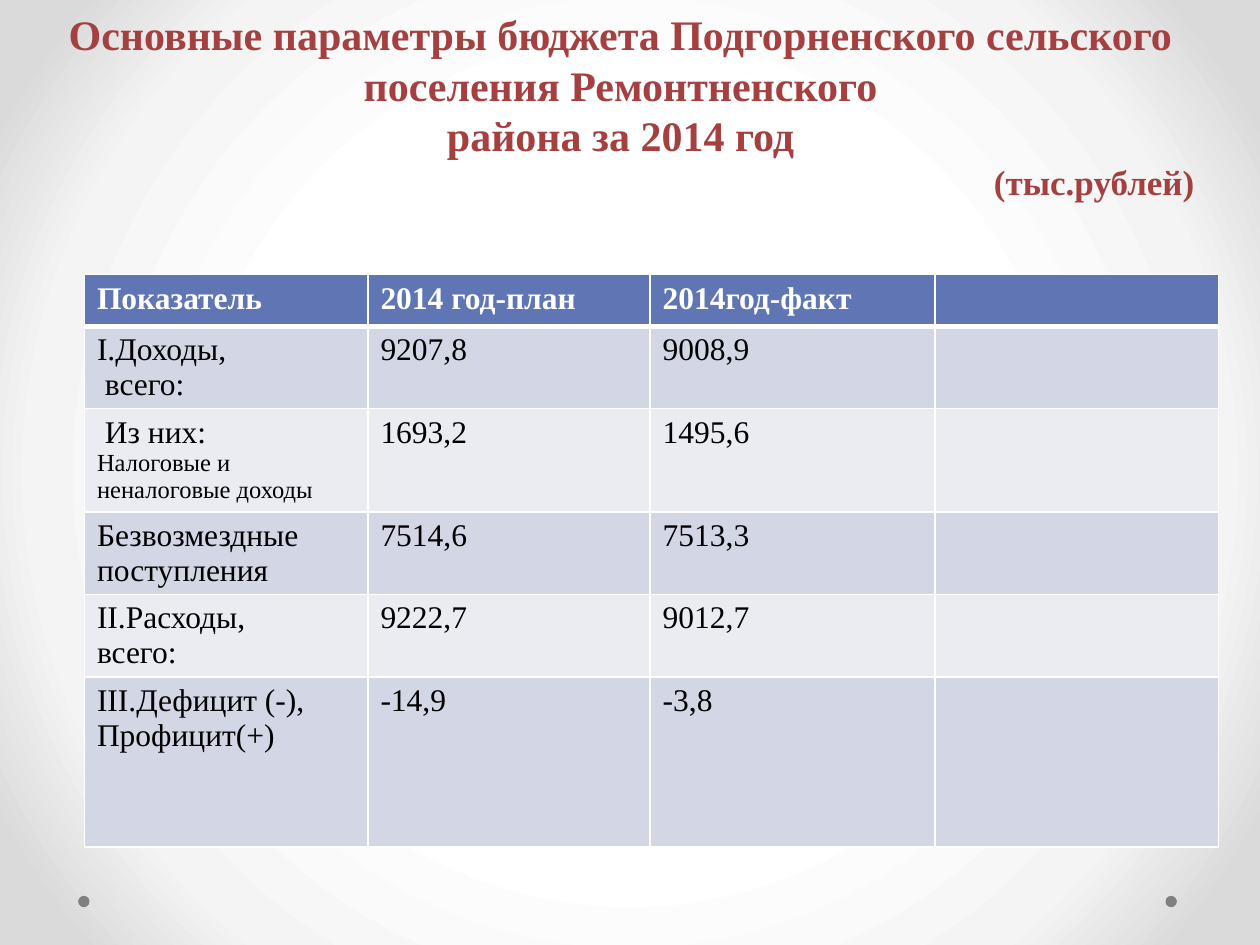
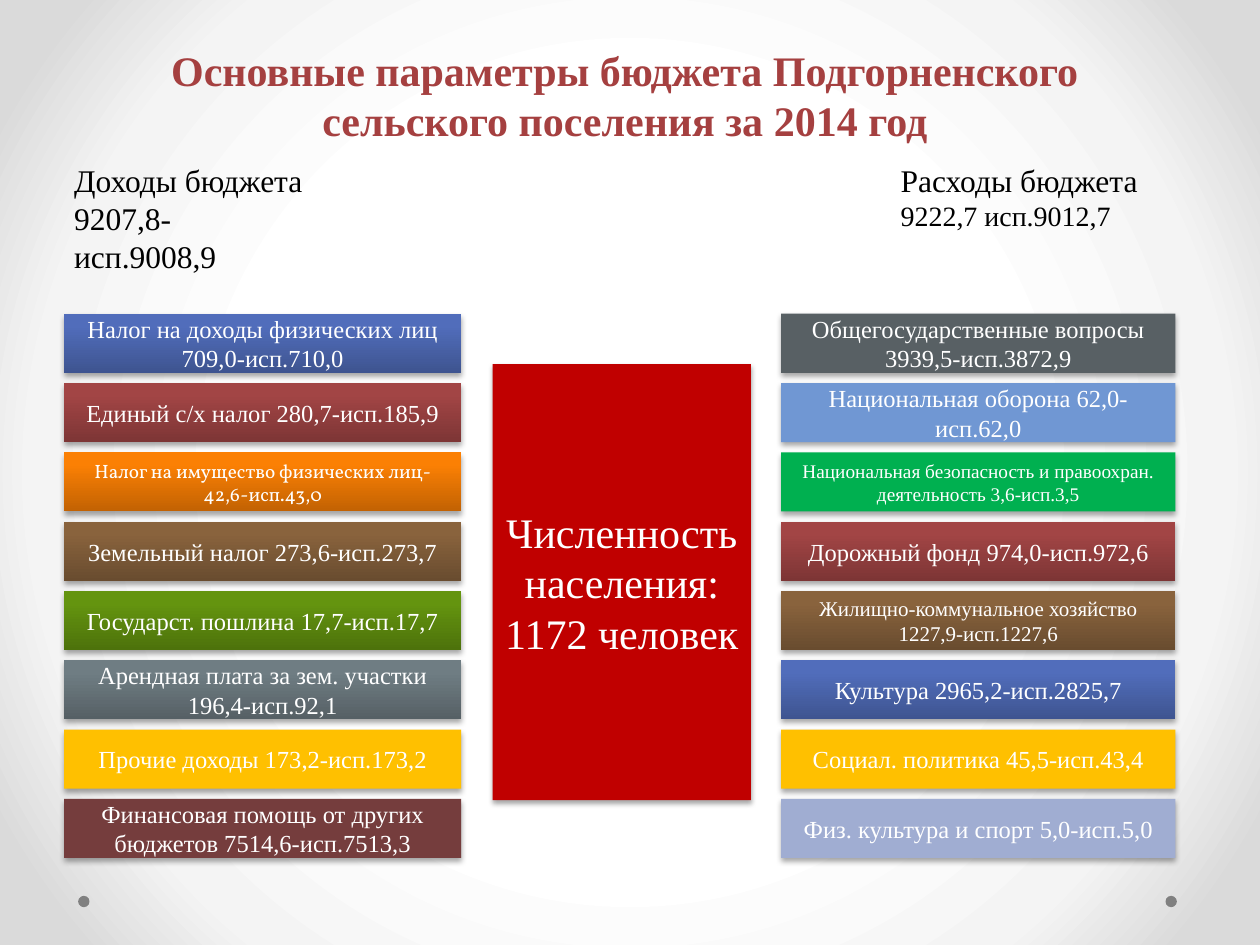
"""Builds two slides on the 2014 budget of a rural settlement."""
from lxml import etree
from pptx import Presentation
from pptx.dml.color import RGBColor
from pptx.enum.shapes import MSO_SHAPE as SHAPE
from pptx.enum.text import MSO_ANCHOR as ANCHOR, MSO_AUTO_SIZE as AUTOSIZE, PP_ALIGN as ALIGN
from pptx.oxml import parse_xml
from pptx.oxml.ns import nsdecls, qn
from pptx.util import Inches, Pt

COLORS = {
    "white": "FFFFFF", "black": "000000", "title": "A54040", "dot": "808080",
    "header": "6076B4", "band_dark": "D2D6E5", "band_light": "EAECF2",
    "slate": "586064", "sky": "7097D3", "emerald": "00B050", "gold": "FFC000",
    "lavender": "A0ADD2", "maroon": "753D3D", "scarlet": "C00000",
    "blue": "516DBB", "blue_dark": "3E5490", "red": "A24545", "red_dark": "7D3535",
    "orange": "FB8004", "orange_dark": "C26203", "brown": "89633D", "brown_dark": "694C2F",
    "green": "64940F", "green_dark": "4D720B", "gray": "6F7D83", "gray_dark": "566065",
}
BACKGROUND_STOPS = [(50, "FFFFFF"), (76, "F4F4F4"), (92, "DADADA")]
FONT = "Times New Roman"

BUDGET = [
    ["Показатель", "2014 год-план", "2014год-факт", ""],
    ["I.Доходы,\n всего:", "9207,8", "9008,9", ""],
    [" Из них:\nНалоговые и неналоговые доходы", "1693,2", "1495,6", ""],
    ["Безвозмездные поступления", "7514,6", "7513,3", ""],
    ["II.Расходы,\nвсего:", "9222,7", "9012,7", ""],
    ["III.Дефицит (-),\nПрофицит(+)", "-14,9", "-3,8", ""],
]
INCOME = [
    ("Налог на доходы физических лиц 709,0-исп.710,0", "blue", 14, FONT),
    ("Единый с/х налог 280,7-исп.185,9", "red", 14, FONT),
    ("Налог на имущество физических лиц- 42,6-исп.43,0", "orange", 11, "Vollkorn"),
    ("Земельный налог 273,6-исп.273,7", "brown", 14, FONT),
    ("Государст. пошлина 17,7-исп.17,7", "green", 14, FONT),
    ("Арендная плата за зем. участки 196,4-исп.92,1", "gray", 14, FONT),
    ("Прочие доходы 173,2-исп.173,2", "gold", 14, FONT),
    ("Финансовая помощь от других бюджетов 7514,6-исп.7513,3", "maroon", 14, FONT),
]
EXPENSES = [
    ("Общегосударственные вопросы 3939,5-исп.3872,9", "slate", 14, FONT),
    ("Национальная оборона 62,0-исп.62,0", "sky", 14, FONT),
    ("Национальная безопасность и правоохран. деятельность 3,6-исп.3,5", "emerald", 11, FONT),
    ("Дорожный фонд 974,0-исп.972,6", "red", 14, FONT),
    ("Жилищно-коммунальное хозяйство 1227,9-исп.1227,6", "brown", 12, FONT),
    ("Культура 2965,2-исп.2825,7", "blue", 14, FONT),
    ("Социал. политика 45,5-исп.43,4", "gold", 14, FONT),
    ("Физ. культура и спорт 5,0-исп.5,0", "lavender", 14, FONT),
]


def rgb(name):
    """Return the named palette colour."""
    return RGBColor.from_string(COLORS[name])


class Deck:
    """Holds the shared style and the current slide."""

    def __init__(self):
        """Open a 10 by 7.5 inch presentation with the shared background."""
        self.prs = Presentation()
        self.prs.slide_width, self.prs.slide_height = Inches(10), Inches(7.5)
        self.slide = None
        self.set_background()

    def set_background(self):
        """Give the master a round gradient."""
        master = self.prs.slide_master
        master.background.fill.gradient()
        old = master.element.xpath(".//p:bgPr/a:gradFill")[0]
        stops = "".join(f'<a:gs pos="{pos * 1000}"><a:srgbClr val="{color}"/></a:gs>'
                        for pos, color in BACKGROUND_STOPS)
        new = parse_xml(
            f'<a:gradFill {nsdecls("a")} rotWithShape="1"><a:gsLst>{stops}</a:gsLst>'
            '<a:path path="circle"><a:fillToRect l="50000" t="50000" r="50000" b="50000"/>'
            '</a:path></a:gradFill>')
        old.getparent().replace(old, new)

    def add_slide(self):
        """Start a title-only slide with the two footer dots."""
        self.slide = self.prs.slides.add_slide(self.prs.slide_layouts[5])
        for left in (0.62, 9.25):
            self.shape(SHAPE.OVAL, left, 7.11, 0.09, 0.09, "dot")

    def fill_text(self, tf, lines, color, align=ALIGN.LEFT, bold=False, font=FONT):
        """Fill a text frame with (text, size) paragraphs."""
        tf.word_wrap = True
        for i, (text, size) in enumerate(lines):
            p = tf.add_paragraph() if i else tf.paragraphs[0]
            p.text, p.alignment = text, align
            p.font.name, p.font.size, p.font.bold = font, Pt(size), bold
            p.font.color.rgb = rgb(color)

    def title(self, lines, left, top, width, height):
        """Place and format the title placeholder."""
        sp = self.slide.shapes.title
        sp.left, sp.top, sp.width, sp.height = map(Inches, (left, top, width, height))
        tf = sp.text_frame
        self.fill_text(tf, lines, "title", ALIGN.CENTER, bold=True)
        tf.auto_size, tf.vertical_anchor = AUTOSIZE.NONE, ANCHOR.TOP
        tf.margin_left = tf.margin_right = Inches(0.25)
        return tf

    def text(self, lines, left, top, width, height):
        """Add a wrapped text box."""
        sp = self.slide.shapes.add_textbox(*map(Inches, (left, top, width, height)))
        self.fill_text(sp.text_frame, lines, "black")

    def shape(self, kind, left, top, width, height, color):
        """Add a borderless shape, shaded when its colour has a dark partner."""
        sp = self.slide.shapes.add_shape(kind, *map(Inches, (left, top, width, height)))
        sp.shadow.inherit = False
        sp.line.fill.background()
        if f"{color}_dark" in COLORS:
            sp.fill.gradient()
            sp.fill.gradient_angle = 90
            dark, light = sp.fill.gradient_stops
            dark.color.rgb, dark.position = rgb(f"{color}_dark"), 0
            light.color.rgb, light.position = rgb(color), 0.8
        else:
            sp.fill.solid()
            sp.fill.fore_color.rgb = rgb(color)
        return sp

    def block(self, lines, left, top, width, height, color, font=FONT):
        """Add a rectangle with a soft shadow and centred white text."""
        sp = self.shape(SHAPE.RECTANGLE, left, top, width, height, color)
        shadow = etree.SubElement(sp.element.spPr.find(qn("a:effectLst")), qn("a:outerShdw"),
                                  blurRad=str(Pt(3.1)), dist=str(Pt(1.8)), dir="5400000",
                                  algn="ctr", rotWithShape="0")
        clr = etree.SubElement(shadow, qn("a:srgbClr"), val=COLORS["black"])
        etree.SubElement(clr, qn("a:alpha"), val="35000")
        sp.text_frame.vertical_anchor = ANCHOR.MIDDLE
        self.fill_text(sp.text_frame, lines, "white", ALIGN.CENTER, font=font)

    def bars(self, items, left, width):
        """Stack one block per budget item."""
        for i, (text, color, size, font) in enumerate(items):
            self.block([(text, size)], left, 2.49 + 0.55 * i, width, 0.47, color, font)

    def borders(self, cell, bottom):
        """Draw white cell borders with the given bottom width in points."""
        tc_pr = cell._tc.get_or_add_tcPr()
        for i, (side, width) in enumerate(zip("LRTB", (1, 1, 1, bottom))):
            tc_pr.insert(i, parse_xml(
                f'<a:ln{side} {nsdecls("a")} w="{Pt(width)}"><a:solidFill>'
                f'<a:srgbClr val="{COLORS["white"]}"/></a:solidFill></a:ln{side}>'))

    def table(self, rows, left, top, widths, heights):
        """Add a banded table with a header row."""
        size = (left, top, sum(widths), sum(heights))
        table = self.slide.shapes.add_table(len(rows), len(widths), *map(Inches, size)).table
        for column, width in zip(table.columns, widths):
            column.width = Inches(width)
        for r, (values, height) in enumerate(zip(rows, heights)):
            table.rows[r].height = Inches(height)
            band = "header" if r == 0 else "band_dark" if r % 2 else "band_light"
            for c, value in enumerate(values):
                cell = table.cell(r, c)
                cell.fill.solid()
                cell.fill.fore_color.rgb = rgb(band)
                self.borders(cell, 1 if r else 3)
                lines = [(line, 18) for line in value.split("\n")]
                self.fill_text(cell.text_frame, lines, "black" if r else "white", bold=r == 0)
        return table


def main():
    """Build and save both slides."""
    deck = Deck()

    deck.add_slide()
    table = deck.table(BUDGET, 0.67, 2.18, [2.25, 2.24, 2.26, 2.25],
                       [0.41, 0.65, 0.82, 0.65, 0.65, 1.35])
    table.cell(2, 0).text_frame.paragraphs[1].font.size = Pt(14)
    tf = deck.title([("Основные параметры бюджета Подгорненского сельского поселения "
                      "Ремонтненского\vрайона за 2014 год", 24), ("(тыс.рублей)", 20)],
                    0.12, 0.02, 9.61, 1.65)
    tf.paragraphs[1].alignment = ALIGN.RIGHT

    deck.add_slide()
    deck.text([("Доходы бюджета", 18), ("9207,8-исп.9008,9", 18)], 0.49, 1.23, 2.05, 1.01)
    deck.text([("Расходы бюджета", 18), ("9222,7 исп.9012,7", 16)], 7.05, 1.23, 2.28, 0.94)
    deck.bars(INCOME, 0.51, 3.15)
    deck.bars(EXPENSES, 6.2, 3.13)
    deck.block([("Численность населения:", 24), ("1172 человек", 24)],
               3.91, 2.89, 2.05, 3.46, "scarlet")
    deck.title([("Основные параметры бюджета Подгорненского сельского поселения "
                 "за 2014 год", 24)], 0.51, 0.3, 8.9, 0.91)

    deck.prs.save("out.pptx")


if __name__ == "__main__":
    main()
